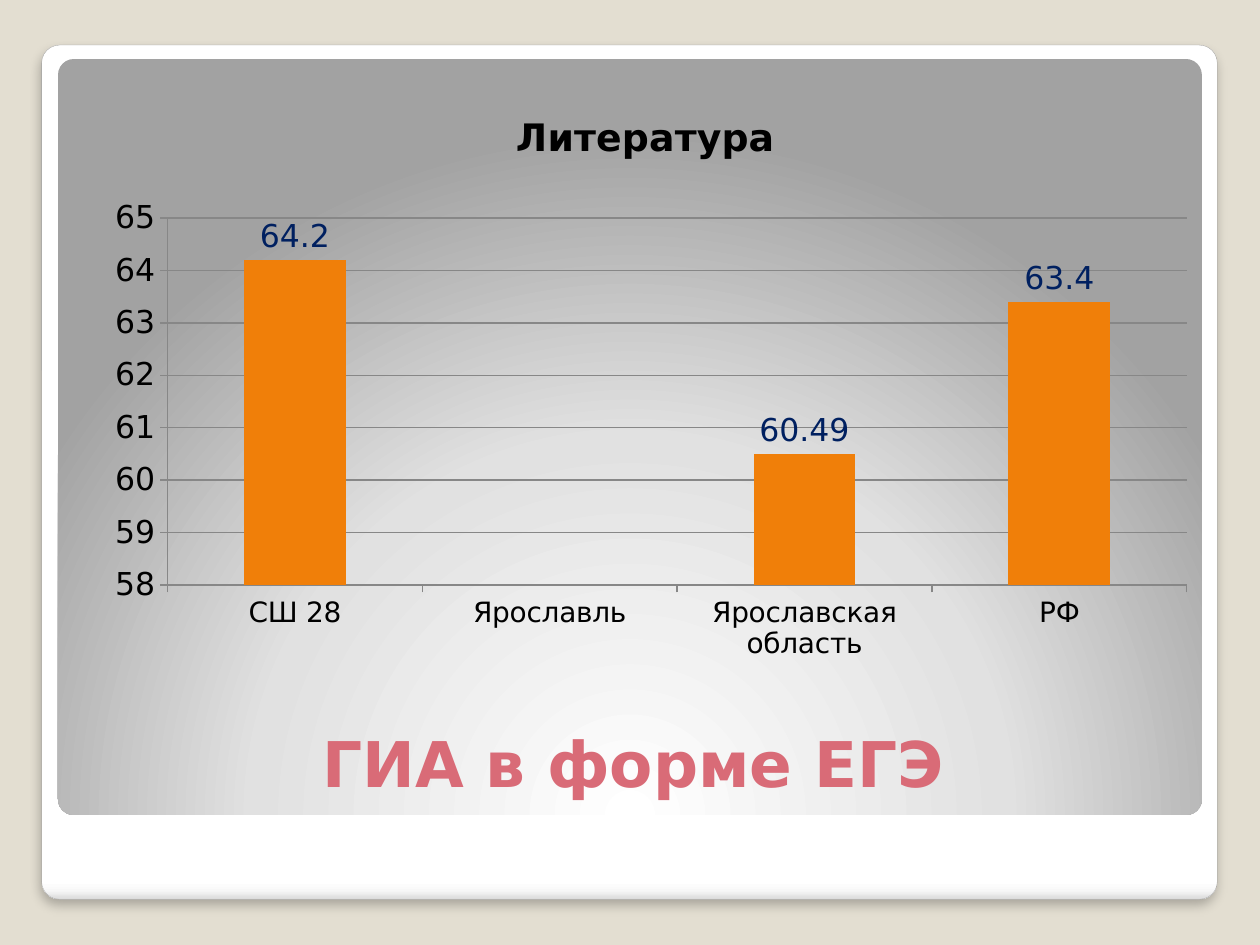
"""Build the slide with the literature exam results chart."""
from lxml.etree import SubElement
from pptx import Presentation
from pptx.chart.data import CategoryChartData
from pptx.dml.color import RGBColor
from pptx.enum.chart import XL_CHART_TYPE, XL_LABEL_POSITION, XL_TICK_MARK
from pptx.enum.shapes import MSO_SHAPE
from pptx.enum.text import MSO_ANCHOR, PP_ALIGN
from pptx.oxml import parse_xml
from pptx.oxml.ns import nsdecls, qn
from pptx.util import Cm, Pt

FONT = "DejaVu Sans"
BEIGE = RGBColor(0xE3, 0xDE, 0xD1)
BORDER = RGBColor(0xA4, 0xA4, 0xA4)
ROSE = RGBColor(0xD9, 0x6B, 0x77)
ORANGE = RGBColor(0xF0, 0x7F, 0x09)
NAVY = RGBColor(0x00, 0x20, 0x60)
BLACK = RGBColor(0x00, 0x00, 0x00)
GRID = RGBColor(0x87, 0x87, 0x87)


def add_panel(page, left, top, width, height, stops, direction):
    panel = page.shapes.add_shape(
        MSO_SHAPE.ROUNDED_RECTANGLE, Cm(left), Cm(top), Cm(width), Cm(height))
    panel.adjustments[0] = 0.021
    panel.shadow.inherit = False
    panel.line.fill.background()
    panel.fill.background()
    stop_list = "".join(
        f'<a:gs pos="{position * 1000}"><a:srgbClr val="{color}"/></a:gs>'
        for position, color in stops)
    gradient = parse_xml(
        f'<a:gradFill {nsdecls("a")} rotWithShape="1">'
        f'<a:gsLst>{stop_list}</a:gsLst>{direction}</a:gradFill>')
    properties = panel._element.spPr
    properties.replace(properties.find(qn("a:noFill")), gradient)
    return panel


def place_manually(parent, position, settings):
    layout = parent.find(qn("c:layout"))
    if layout is None:
        layout = parse_xml(f'<c:layout {nsdecls("c")}/>')
        parent.insert(position, layout)
    manual = SubElement(layout, qn("c:manualLayout"))
    for name, value in settings.items():
        SubElement(manual, qn(f"c:{name}")).set("val", str(value))


deck = Presentation()
deck.slide_width, deck.slide_height = Cm(25.4), Cm(19.05)
page = deck.slides.add_slide(deck.slide_layouts[5])
page.background.fill.solid()
page.background.fill.fore_color.rgb = BEIGE

frame = add_panel(
    page, 0.84, 0.91, 23.7, 17.22,
    [(0, "FFFFFF"), (98, "FFFFFF"), (99, "F7F7F7"), (100, "DADADA")],
    '<a:lin ang="5400000" scaled="0"/>')
frame.line.color.rgb = BORDER
frame.line.width = Pt(0.16)
effects = frame._element.spPr.find(qn("a:effectLst"))
effects.append(parse_xml(
    f'<a:outerShdw {nsdecls("a")} blurRad="{Pt(6)}" dist="{Pt(4)}" dir="5400000" '
    'rotWithShape="0"><a:srgbClr val="000000"><a:alpha val="25000"/></a:srgbClr>'
    '</a:outerShdw>'))

add_panel(
    page, 1.17, 1.19, 23.06, 15.24,
    [(0, "FFFFFF"), (55, "E1E1E1"), (100, "A2A2A2")],
    '<a:path path="circle">'
    '<a:fillToRect l="50000" t="175000" r="50000" b="-75000"/></a:path>')

title = page.shapes.title
title.left, title.top, title.width, title.height = Cm(1.4), Cm(13.28), Cm(22.73), Cm(2.97)
title.text_frame.text = "ГИА в форме ЕГЭ"
title.text_frame.vertical_anchor = MSO_ANCHOR.BOTTOM
paragraph = title.text_frame.paragraphs[0]
paragraph.alignment = PP_ALIGN.CENTER
span = paragraph.runs[0]
span.font.name, span.font.size, span.font.bold = FONT, Pt(36), True
span.font.color.rgb = ROSE
page.shapes._spTree.append(title._element)

results = CategoryChartData()
results.categories = ["СШ 28", "Ярославль", "Ярославская область", "РФ"]
results.add_series("Series 1", [64.2, None, 60.49, 63.4])
chart = page.shapes.add_chart(
    XL_CHART_TYPE.COLUMN_CLUSTERED, Cm(1.4), Cm(1.47), Cm(22.73), Cm(12.62), results).chart
chart.has_legend = False
chart.font.name, chart.font.size = FONT, Pt(18)
chart.font.color.rgb = BLACK

chart.has_title = True
chart.chart_title.text_frame.text = "Литература"
span = chart.chart_title.text_frame.paragraphs[0].runs[0]
span.font.name, span.font.size, span.font.bold = FONT, Pt(21.6), True
span.font.color.rgb = BLACK

category_axis, value_axis = chart.category_axis, chart.value_axis
for axis in (category_axis, value_axis):
    axis.major_tick_mark = XL_TICK_MARK.OUTSIDE
    axis.minor_tick_mark = XL_TICK_MARK.NONE
    axis.format.line.color.rgb = GRID
category_axis.tick_labels.font.size = Pt(16)
value_axis.minimum_scale, value_axis.maximum_scale = 58, 65
value_axis.major_unit = 1
value_axis.has_major_gridlines = True
value_axis.major_gridlines.format.line.color.rgb = GRID

plot = chart.plots[0]
plot.gap_width = 150
plot.vary_by_categories = False
series = plot.series[0]
series.format.fill.solid()
series.format.fill.fore_color.rgb = ORANGE
labels = series.data_labels
labels.show_value = True
labels.position = XL_LABEL_POSITION.OUTSIDE_END
labels.font.name, labels.font.size = FONT, Pt(18)
labels.font.color.rgb = NAVY

place_manually(chart.chart_title._element, 1, {
    "xMode": "edge", "yMode": "edge", "x": 0.39, "y": 0.05})
place_manually(chart._chartSpace.chart.plotArea, 0, {
    "layoutTarget": "inner", "xMode": "edge", "yMode": "edge",
    "x": 0.087, "y": 0.232, "w": 0.904, "h": 0.586})

deck.save("out.pptx")
